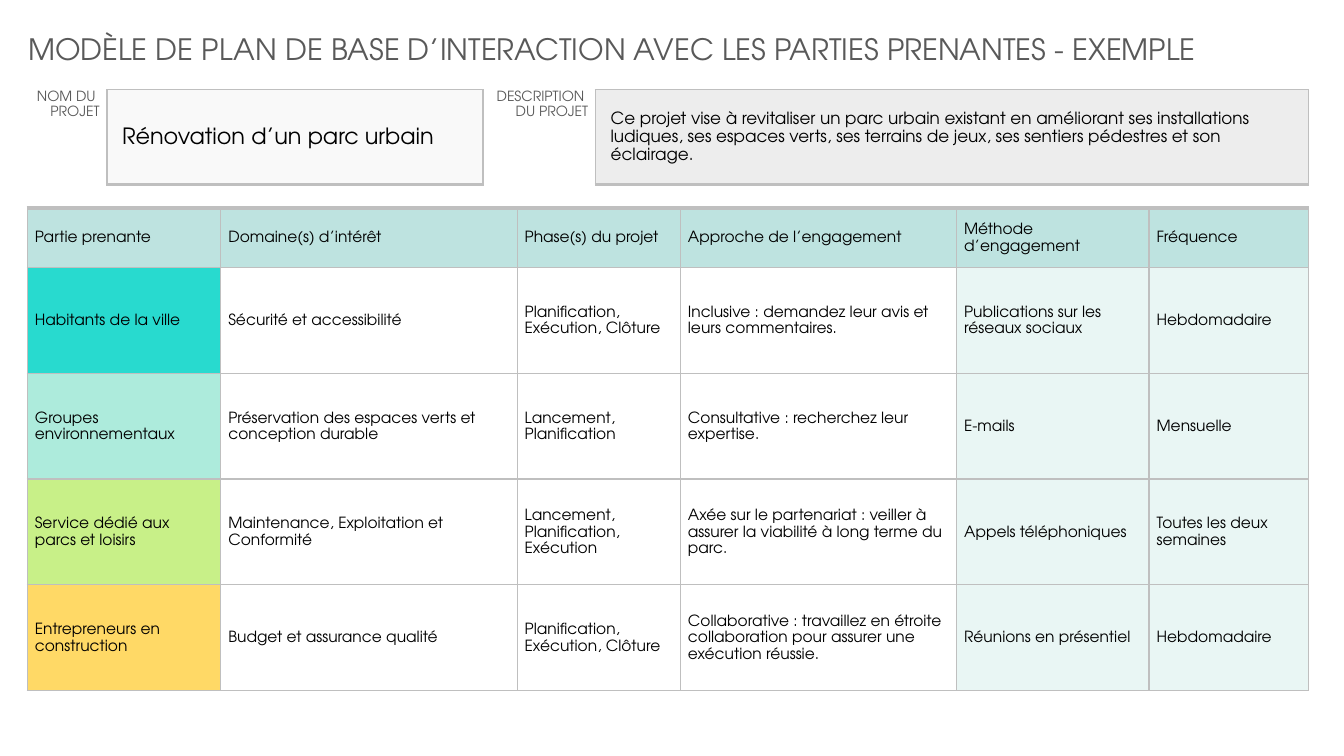
from copy import deepcopy
from dataclasses import dataclass

from lxml import etree
from pptx import Presentation
from pptx.dml.color import RGBColor
from pptx.enum.text import MSO_ANCHOR, PP_ALIGN
from pptx.oxml.ns import qn
from pptx.util import Pt

LEFT, RIGHT = PP_ALIGN.LEFT, PP_ALIGN.RIGHT
TOP, MIDDLE = MSO_ANCHOR.TOP, MSO_ANCHOR.MIDDLE
PLAIN_TABLE_STYLE = "{2D5ABB26-0587-4C30-8999-92F81FD0307C}"
BLANK_LAYOUT = 6


@dataclass(frozen=True)
class Theme:
    """Font, sizes, colours and line widths of the slide."""
    font: str = "TeX Gyre Adventor"
    title_size: float = 21
    name_size: float = 16
    description_size: float = 12
    plan_size: float = 11
    label_size: float = 10
    heading: str = "595959"
    body: str = "000000"
    border: str = "BFBFBF"
    name_fill: str = "F9F9F9"
    description_fill: str = "EDEDED"
    header_fill: str = "BEE3E0"
    content_fill: str = "FFFFFF"
    contact_fill: str = "E9F6F4"
    stakeholder_fills: tuple = ("28DACF", "ADEBDC", "C8F088", "FFD966")
    inset: float = 5.4
    line_spacing: float = 1.15


THEME = Theme()
BOX_BORDERS = {"L": 1, "R": 1, "T": 1, "B": 2.25}
HEADER_BORDERS = {"L": 1, "R": 1, "T": 3, "B": 1}
GRID_BORDERS = {"L": 1, "R": 1, "T": 1, "B": 1}

TITLE = "MODÈLE DE PLAN DE BASE D’INTERACTION AVEC LES PARTIES PRENANTES - EXEMPLE"
DESCRIPTION = (
    "Ce projet vise à revitaliser un parc urbain existant en améliorant ses "
    "installations ludiques, ses espaces verts, ses terrains de jeux, ses sentiers "
    "pédestres et son éclairage."
)
PLAN_HEADERS = ("Partie prenante", "Domaine(s) d’intérêt", "Phase(s) du projet",
                "Approche de l’engagement", "Méthode d’engagement", "Fréquence")
PLAN_ROWS = (
    ("Habitants de la ville", "Sécurité et accessibilité",
     "Planification, Exécution, Clôture",
     "Inclusive : demandez leur avis et leurs commentaires.",
     "Publications sur les réseaux sociaux", "Hebdomadaire"),
    ("Groupes environnementaux", "Préservation des espaces verts et conception durable",
     "Lancement, Planification", "Consultative : recherchez leur expertise.",
     "E-mails", "Mensuelle"),
    ("Service dédié aux parcs et loisirs", "Maintenance, Exploitation et Conformité",
     "Lancement, Planification, Exécution",
     "Axée sur le partenariat : veiller à assurer la viabilité à long terme du parc.",
     "Appels téléphoniques", "Toutes les deux semaines"),
    ("Entrepreneurs en construction", "Budget et assurance qualité",
     "Planification, Exécution, Clôture",
     "Collaborative : travaillez en étroite collaboration pour assurer une "
     "exécution réussie.",
     "Réunions en présentiel", "Hebdomadaire"),
)
PLAN_WIDTHS = (138.2, 211.7, 116.6, 197.3, 137.5, 113.8)
HEADER_HEIGHT = 42.5


def write_text(frame, text, *, size, color=THEME.body, align=LEFT, spacing=None, indent=0):
    """Write one formatted paragraph, turning newlines into line breaks."""
    paragraph = frame.paragraphs[0]
    paragraph.alignment = align
    if spacing:
        paragraph.line_spacing = spacing
    if indent:
        paragraph._p.get_or_add_pPr().set("marL", str(Pt(indent)))
    for number, line in enumerate(text.split("\n")):
        if number:
            paragraph.add_line_break()
        run = paragraph.add_run()
        run.text = line
        run.font.name = THEME.font
        run.font.size = Pt(size)
        run.font.color.rgb = RGBColor.from_string(color)
    for line_break in paragraph._p.findall(qn("a:br")):
        line_break.insert(0, deepcopy(run._r.rPr))


def add_borders(cell, widths):
    """Draw the cell borders whose sides are given with their widths."""
    properties = cell._tc.get_or_add_tcPr()
    for side, width in widths.items():
        line = etree.SubElement(properties, qn(f"a:ln{side}"), w=str(Pt(width)))
        fill = etree.SubElement(line, qn("a:solidFill"))
        etree.SubElement(fill, qn("a:srgbClr"), val=THEME.border)


def fill_cell(cell, text, *, borders, fill=None, anchor=MIDDLE, **text_format):
    """Set the text, borders and fill of a table cell."""
    cell.margin_left = cell.margin_right = Pt(THEME.inset)
    cell.margin_top = cell.margin_bottom = 0
    cell.vertical_anchor = anchor
    write_text(cell.text_frame, text, spacing=THEME.line_spacing, **text_format)
    add_borders(cell, borders)
    if fill:
        cell.fill.solid()
        cell.fill.fore_color.rgb = RGBColor.from_string(fill)
    else:
        cell.fill.background()


def add_plain_table(slide, left, top, widths, heights):
    """Add a table without any style, with the given columns and rows."""
    shape = slide.shapes.add_table(len(heights), len(widths), Pt(left), Pt(top),
                                   Pt(sum(widths)), Pt(sum(heights)))
    table = shape.table
    table.first_row = table.horz_banding = False
    table._tbl.tblPr.find(qn("a:tableStyleId")).text = PLAIN_TABLE_STYLE
    for column, width in zip(table.columns, widths):
        column.width = Pt(width)
    for row, height in zip(table.rows, heights):
        row.height = Pt(height)
    return table


def add_title(slide, left, top, width, height):
    """Place the slide title."""
    frame = slide.shapes.add_textbox(Pt(left), Pt(top), Pt(width), Pt(height)).text_frame
    frame.word_wrap = True
    write_text(frame, TITLE, size=THEME.title_size, color=THEME.heading)


def add_project_field(slide, left, top, width, height, *, label_width, label, value,
                      fill, size):
    """Place a right-aligned label beside its boxed value."""
    table = add_plain_table(slide, left, top, (label_width, width - label_width), (height,))
    fill_cell(table.cell(0, 0), label, borders={"R": 1}, anchor=TOP,
              size=THEME.label_size, color=THEME.heading, align=RIGHT)
    fill_cell(table.cell(0, 1), value, borders=BOX_BORDERS, fill=fill,
              size=size, indent=THEME.inset)


def add_plan(slide, left, top, width, height):
    """Place the stakeholder plan with its header and equal rows."""
    scale = width / sum(PLAN_WIDTHS)
    row_height = (height - HEADER_HEIGHT) / len(PLAN_ROWS)
    table = add_plain_table(slide, left, top, [column * scale for column in PLAN_WIDTHS],
                            [HEADER_HEIGHT] + [row_height] * len(PLAN_ROWS))
    for column, text in enumerate(PLAN_HEADERS):
        fill_cell(table.cell(0, column), text, borders=HEADER_BORDERS,
                  fill=THEME.header_fill, size=THEME.plan_size)
    for row, (texts, color) in enumerate(zip(PLAN_ROWS, THEME.stakeholder_fills), 1):
        fills = (color,) + (THEME.content_fill,) * 3 + (THEME.contact_fill,) * 2
        for column, (text, fill) in enumerate(zip(texts, fills)):
            fill_cell(table.cell(row, column), text, borders=GRID_BORDERS,
                      fill=fill, size=THEME.plan_size)


def main():
    """Build and save the stakeholder plan slide."""
    presentation = Presentation()
    presentation.slide_width, presentation.slide_height = Pt(960), Pt(540)
    slide = presentation.slides.add_slide(presentation.slide_layouts[BLANK_LAYOUT])
    add_title(slide, 13, 18.7, 903.6, 32.4)
    add_project_field(slide, 13, 64.1, 332, 67.7, label_width=63.4,
                      label="NOM DU \nPROJET", value="Rénovation d’un parc urbain",
                      fill=THEME.name_fill, size=THEME.name_size)
    add_project_field(slide, 345, 64.1, 589.8, 67.7, label_width=80.4,
                      label="DESCRIPTION \nDU PROJET", value=DESCRIPTION,
                      fill=THEME.description_fill, size=THEME.description_size)
    add_plan(slide, 19.5, 148.5, 915.1, 344.9)
    presentation.save("out.pptx")


if __name__ == "__main__":
    main()
